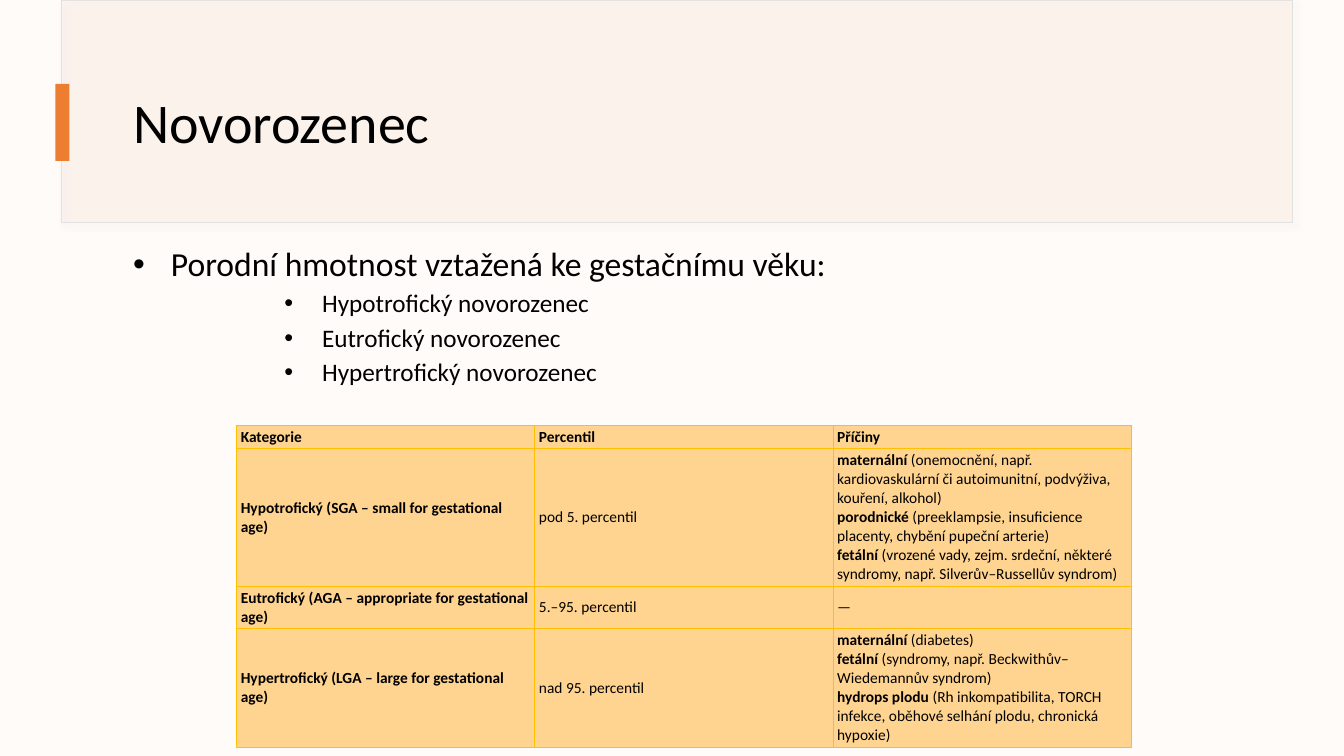
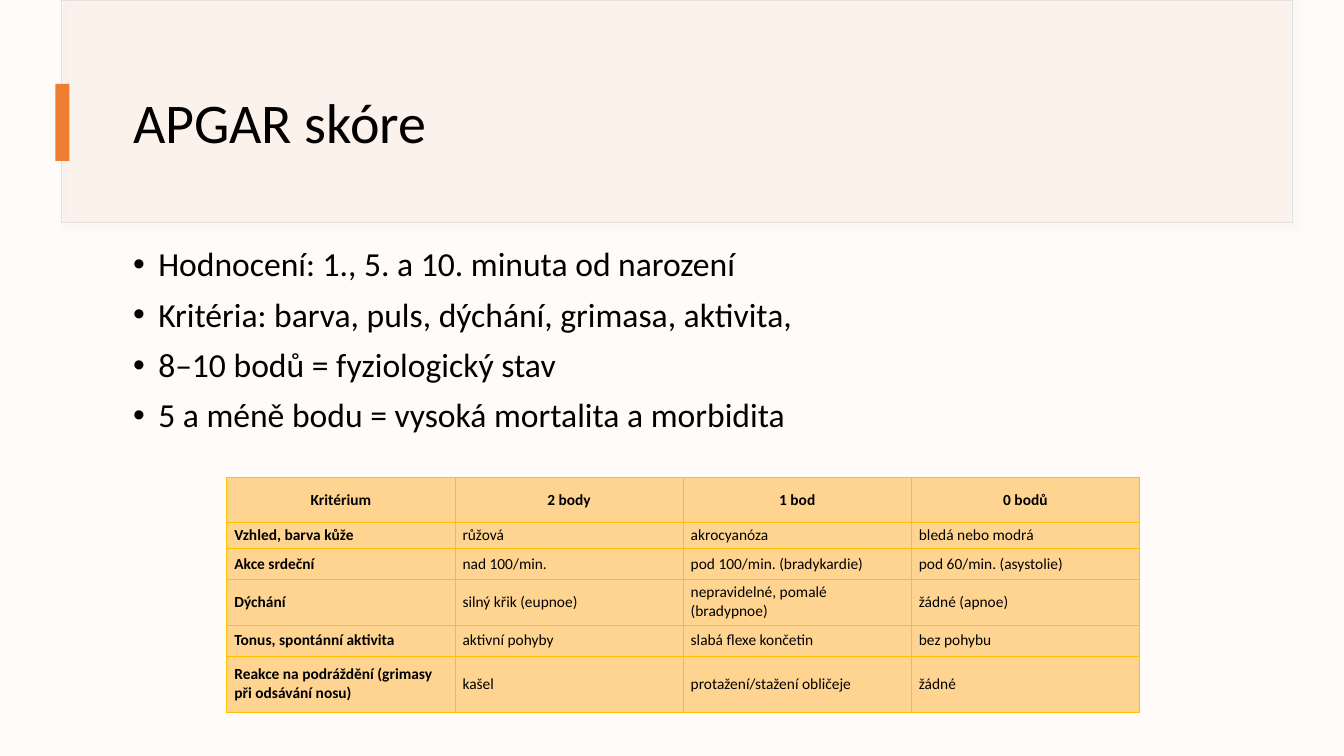
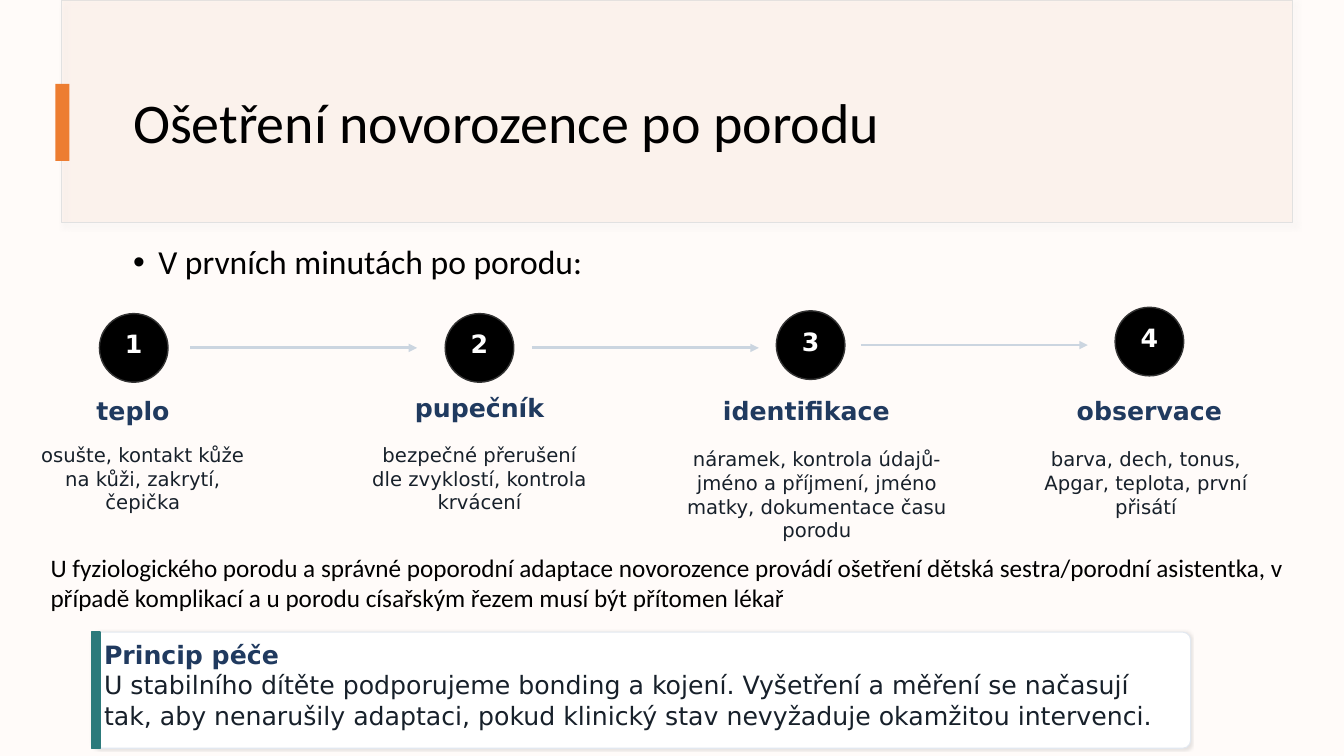
from dataclasses import dataclass
from pptx import Presentation
from pptx.dml.color import RGBColor as Rgb
from pptx.enum.shapes import MSO_CONNECTOR as Link, MSO_SHAPE as Form
from pptx.enum.text import MSO_ANCHOR as Anchor, PP_ALIGN as Align
from pptx.oxml.ns import qn
from pptx.oxml.xmlchemy import OxmlElement as Node
from pptx.util import Pt


@dataclass(frozen=True)
class Theme:
    paper: str = "FFFBF9"
    band: str = "FBE5D6"
    edge: str = "E1E1E1"
    shade: str = "D9D9D9"
    accent: str = "ED7D31"
    ink: str = "000000"
    white: str = "FFFFFF"
    cell: str = "FFD490"
    grid: str = "FFC000"
    ring: str = "333333"
    arrow: str = "CBD5E0"
    navy: str = "203A5F"
    dark: str = "17202A"
    frame: str = "E2E8F0"
    teal: str = "2C7A7B"
    main: str = "Calibri"
    alt: str = "DejaVu Sans"
    title: int = 40
    lead: int = 24
    text: int = 18
    note: int = 14
    small: int = 11


T = Theme()


def add(parent, tag, **attrs):
    node = Node(tag)
    for key, val in attrs.items():
        node.set(key, str(val))
    parent.append(node)
    return node


def write(para, text, size=T.text, font=T.main, color=T.ink, bold=False):
    run = para.add_run()
    run.text = text
    run.font.size = Pt(size)
    run.font.name = font
    run.font.bold = bold
    run.font.color.rgb = Rgb.from_string(color)


class Deck:
    def __init__(self):
        self.prs = Presentation()
        self.prs.slide_width, self.prs.slide_height = Pt(960), Pt(540)

    def page(self, title):
        self.slide = self.prs.slides.add_slide(self.prs.slide_layouts[6])
        self.shapes = self.slide.shapes
        fill = self.slide.background.fill
        fill.solid()
        fill.fore_color.rgb = Rgb.from_string(T.paper)
        self.shape(Form.RECTANGLE, 44, 0, 879, 159, T.band, T.edge, 0.75,
                   alpha=15, shadow=(T.shade, 50, 4, 3))
        self.shape(Form.RECTANGLE, 44.5, 0, 878.5, 158.5, T.band, alpha=15)
        frame = self.box(88, 43, 801, 93)
        frame.vertical_anchor = Anchor.MIDDLE
        para = frame.paragraphs[0]
        para.line_spacing = 0.9
        write(para, title, size=T.title)
        self.shape(Form.RECTANGLE, 39.5, 60, 10, 55, T.accent)

    def shape(self, form, x, y, w, h, fill, line=None, width=1, alpha=None, shadow=None):
        shape = self.shapes.add_shape(form, Pt(x), Pt(y), Pt(w), Pt(h))
        shape.shadow.inherit = False
        shape.fill.solid()
        shape.fill.fore_color.rgb = Rgb.from_string(fill)
        props = shape._element.spPr
        if alpha:
            color = props.find(qn("a:solidFill")).find(qn("a:srgbClr"))
            add(color, "a:alpha", val=alpha * 1000)
        if line:
            shape.line.color.rgb = Rgb.from_string(line)
            shape.line.width = Pt(width)
        else:
            shape.line.fill.background()
        if shadow:
            tint, part, blur, dist = shadow
            cast = add(props.find(qn("a:effectLst")), "a:outerShdw", blurRad=Pt(blur),
                       dist=Pt(dist), dir=45 * 60000, algn="tl", rotWithShape=0)
            add(add(cast, "a:srgbClr", val=tint), "a:alpha", val=part * 1000)
        shape.text_frame.word_wrap = True
        shape.text_frame.vertical_anchor = Anchor.TOP
        return shape

    def box(self, x, y, w, h):
        frame = self.shapes.add_textbox(Pt(x), Pt(y), Pt(w), Pt(h)).text_frame
        frame.word_wrap = True
        return frame

    def label(self, x, y, w, h, text, align=Align.CENTER, **style):
        para = self.box(x, y, w, h).paragraphs[0]
        para.alignment = align
        write(para, text, **style)

    def bullets(self, items, top=173.5, gap=10):
        frame = self.box(88, top, 801, 354)
        for i, (text, size, left, hang) in enumerate(items):
            para = frame.add_paragraph() if i else frame.paragraphs[0]
            props = para._p.get_or_add_pPr()
            props.set("marL", str(Pt(left)))
            props.set("indent", str(-Pt(hang)))
            add(props, "a:buFont", typeface="Arial")
            add(props, "a:buChar", char="•")
            para.line_spacing = 0.9
            if i:
                para.space_before = Pt(gap)
            write(para, text, size=size)

    def table(self, x, y, width, heights, rows, pad, head=Align.LEFT):
        count = len(rows[0])
        table = self.shapes.add_table(len(rows), count, Pt(x), Pt(y),
                                      Pt(width * count), Pt(sum(heights))).table
        for col in table.columns:
            col.width = Pt(width)
        for r, (row, high) in enumerate(zip(rows, heights)):
            table.rows[r].height = Pt(high)
            for c, value in enumerate(row):
                self.cell(table.cell(r, c), value, pad, not r or not c,
                          Align.LEFT if r else head)

    def cell(self, cell, value, pad, bold, align):
        props = cell._tc.get_or_add_tcPr()
        for side in "LRTB":
            line = add(props, f"a:ln{side}", w=Pt(0.5))
            add(add(line, "a:solidFill"), "a:srgbClr", val=T.grid)
        cell.fill.solid()
        cell.fill.fore_color.rgb = Rgb.from_string(T.cell)
        cell.margin_left = cell.margin_right = Pt(pad)
        cell.margin_top = cell.margin_bottom = Pt(pad / 2)
        cell.vertical_anchor = Anchor.MIDDLE
        paras = [[(value, bold)]]
        if isinstance(value, list):
            paras = [[(key, True), (rest, False)] for key, rest in value]
        frame = cell.text_frame
        for i, runs in enumerate(paras):
            para = frame.add_paragraph() if i else frame.paragraphs[0]
            para.alignment = align
            for text, strong in runs:
                write(para, text, size=T.small, bold=strong)

    def arrow(self, x, y, length):
        line = self.shapes.add_connector(Link.STRAIGHT, Pt(x), Pt(y), Pt(x + length), Pt(y))
        line.line.color.rgb = Rgb.from_string(T.arrow)
        line.line.width = Pt(2)
        add(line.line._get_or_add_ln(), "a:tailEnd", type="triangle")
        add(line._element.spPr, "a:effectLst")

    def disc(self, x, y, text):
        para = self.shape(Form.OVAL, x, y, 49, 49, T.ink, T.ring).text_frame.paragraphs[0]
        para.alignment = Align.CENTER
        write(para, text, font=T.alt, color=T.white, bold=True)

    def panel(self, x, y, w, h, head, text):
        card = self.shape(Form.ROUNDED_RECTANGLE, x, y, w, h, T.white, T.frame, 0.75,
                          shadow=(T.ink, 10, 1.5, 0.5))
        card.adjustments[0] = 0.07
        frame = card.text_frame
        top, body = frame.paragraphs[0], frame.add_paragraph()
        top.alignment = body.alignment = Align.LEFT
        write(top, head, font=T.alt, color=T.navy, bold=True)
        write(body, text, font=T.alt, color=T.dark)
        self.shape(Form.RECTANGLE, x, y, 6, h, T.teal, T.teal)


def birth(deck):
    deck.page("Novorozenec")
    kinds = ("Hypotrofický", "Eutrofický", "Hypertrofický")
    deck.bullets([("Porodní hmotnost vztažená ke gestačnímu věku:", T.lead, 27, 27)]
                 + [(f"{kind} novorozenec", T.text, 135, 27) for kind in kinds], gap=5)
    deck.table(169, 304, 213, (16.4, 98.6, 30, 85), [
        ("Kategorie", "Percentil", "Příčiny"),
        ("Hypotrofický (SGA – small for gestational age)", "pod 5. percentil", [
            ("maternální", " (onemocnění, např. kardiovaskulární či autoimunitní, "
             "podvýživa, kouření, alkohol)"),
            ("porodnické", " (preeklampsie, insuficience placenty, chybění pupeční arterie)"),
            ("fetální", " (vrozené vady, zejm. srdeční, některé syndromy, "
             "např. Silverův–Russellův syndrom)")]),
        ("Eutrofický (AGA – appropriate for gestational age)", "5.–95. percentil", "—"),
        ("Hypertrofický (LGA – large for gestational age)", "nad 95. percentil", [
            ("maternální", " (diabetes)"),
            ("fetální", " (syndromy, např. Beckwithův–Wiedemannův syndrom)"),
            ("hydrops plodu ", "(Rh inkompatibilita, TORCH infekce, "
             "oběhové selhání plodu, chronická hypoxie)")]),
    ], pad=3)


def score(deck):
    deck.page("APGAR skóre")
    lines = ("Hodnocení: 1., 5. a 10. minuta od narození",
             "Kritéria: barva, puls, dýchání, grimasa, aktivita,",
             "8–10 bodů = fyziologický stav",
             "5 a méně bodu = vysoká mortalita a morbidita")
    deck.bullets([(line, T.lead, 18, 18) for line in lines])
    deck.table(162, 341, 163, (32, 19, 21.5, 33, 22, 40), [
        ("Kritérium", "2 body", "1 bod", "0 bodů"),
        ("Vzhled, barva kůže", "růžová", "akrocyanóza", "bledá nebo modrá"),
        ("Akce srdeční", "nad 100/min.", "pod 100/min. (bradykardie)", "pod 60/min. (asystolie)"),
        ("Dýchání", "silný křik (eupnoe)", "nepravidelné, pomalé (bradypnoe)", "žádné (apnoe)"),
        ("Tonus, spontánní aktivita", "aktivní pohyby", "slabá flexe končetin", "bez pohybu"),
        ("Reakce na podráždění (grimasy při odsávání nosu)", "kašel",
         "protažení/stažení obličeje", "žádné"),
    ], pad=5.4, head=Align.CENTER)


def care(deck):
    deck.page("Ošetření novorozence po porodu")
    deck.bullets([("V prvních minutách po porodu:", T.lead, 18, 18)], top=172)
    steps = [
        ((71, 224), (44, 278.5, 102), "teplo", (16.5, 313, 171, 58),
         "osušte, kontakt kůže na kůži, zakrytí, čepička"),
        ((318, 224), (283.5, 277, 118), "pupečník", (257, 313, 171, 58),
         "bezpečné přerušení dle zvyklostí, kontrola krvácení"),
        ((554.5, 222), (502, 279, 148), "identifikace", (480, 316, 207, 75),
         "náramek, kontrola údajů-jméno a příjmení, jméno matky, dokumentace času porodu"),
        ((796.5, 219.5), (761, 278.5, 120), "observace", (733, 316, 171, 58),
         "barva, dech, tonus, Apgar, teplota, první přisátí"),
    ]
    for num, (disc, (x, y, w), name, area, text) in enumerate(steps, 1):
        deck.disc(*disc, str(num))
        deck.label(x, y, w, 29, name, font=T.alt, color=T.navy, bold=True)
        deck.label(*area, text, size=T.note, font=T.alt, color=T.dark)
    for x, step in zip((136, 380, 615), steps):
        deck.arrow(x, step[0][1] + 24.5, 162)
    deck.label(29, 391, 918, 51,
               "U fyziologického porodu a správné poporodní adaptace novorozence provádí "
               "ošetření dětská sestra/porodní asistentka, v případě komplikací a u porodu "
               "císařským řezem musí být přítomen lékař", align=Align.LEFT)
    deck.panel(65.5, 451.5, 785, 83, "Princip péče",
               "U stabilního dítěte podporujeme bonding a kojení. Vyšetření a měření se "
               "načasují tak, aby nenarušily adaptaci, pokud klinický stav nevyžaduje "
               "okamžitou intervenci.")


def main():
    deck = Deck()
    for build in (birth, score, care):
        build(deck)
    deck.prs.save("out.pptx")


if __name__ == "__main__":
    main()
